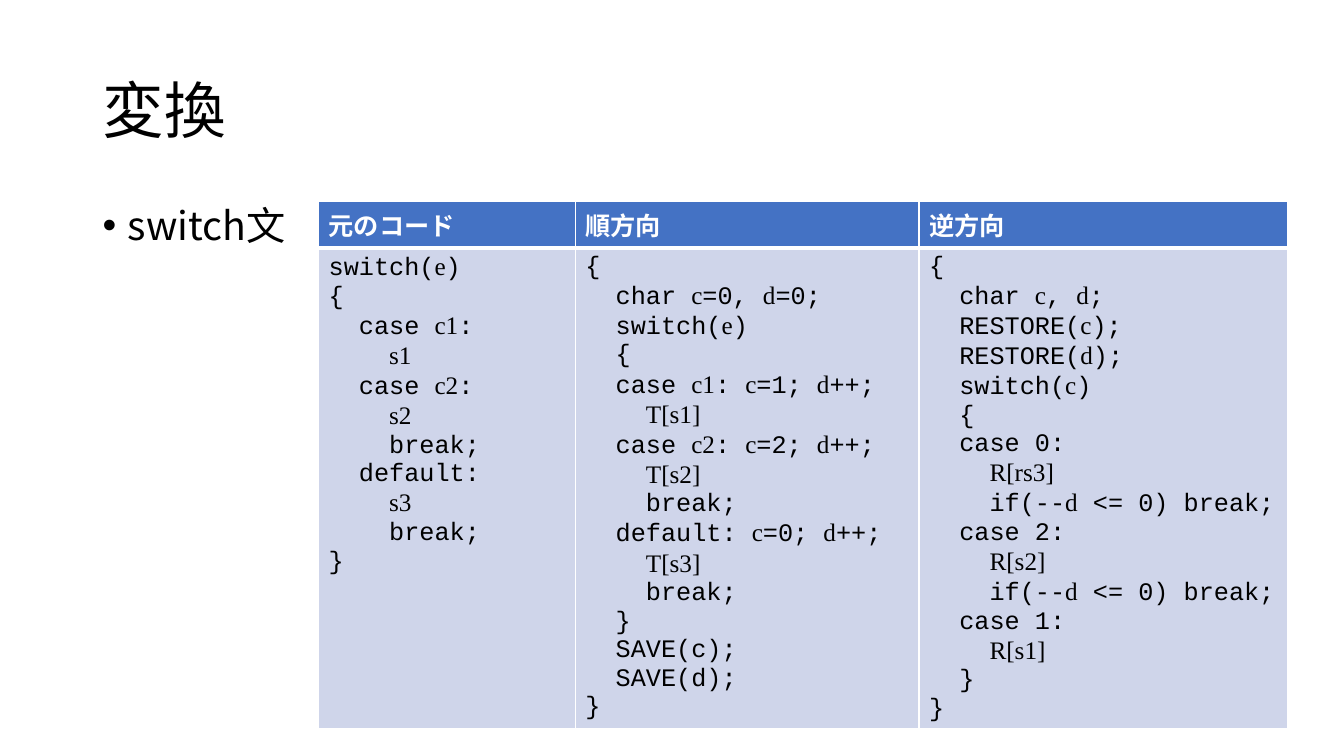
from lxml.etree import SubElement
from pptx import Presentation
from pptx.dml.color import RGBColor
from pptx.enum.text import MSO_ANCHOR, PP_ALIGN
from pptx.oxml.ns import qn
from pptx.util import Cm, Pt

SANS, MONO, SERIF = "Noto Sans CJK JP", "Courier New", "Times New Roman"
BLACK, WHITE, HEADER_BLUE, BODY_BLUE = "000000", "FFFFFF", "4472C4", "CFD5EA"

# Code columns: text between backticks is set in the serif font
ORIGINAL_CODE = """switch(`e`)
{
  case `c1`:
    `s1`
  case `c2`:
    `s2`
    break;
  default:
    `s3`
    break;
}"""

FORWARD_CODE = """{
  char `c`=0, `d`=0;
  switch(`e`)
  {
  case `c1`: `c`=1; `d`++;
    `T[s1]`
  case `c2`: `c`=2; `d`++;
    `T[s2]`
    break;
  default: `c`=0; `d`++;
    `T[s3]`
    break;
  }
  SAVE(c);
  SAVE(d);
}"""

REVERSE_CODE = """{
  char `c`, `d`;
  RESTORE(`c`);
  RESTORE(`d`);
  switch(`c`)
  {
  case 0:
    `R[rs3]`
    if(--`d` <= 0) break;
  case 2:
    `R[s2]`
    if(--`d` <= 0) break;
  case 1:
    `R[s1]`
  }
}"""

# Heading, code and width in cm of each column
COLUMNS = [
    ("元のコード", ORIGINAL_CODE, 6.47),
    ("順方向", FORWARD_CODE, 8.66),
    ("逆方向", REVERSE_CODE, 9.28),
]


def color(hex_string):
    return RGBColor.from_string(hex_string)


def add_text(paragraph, text, size=18, font=SANS, ink=BLACK, bold=False):
    run = paragraph.add_run()
    run.text = text
    run.font.size = Pt(size)
    run.font.bold = bold
    run.font.color.rgb = color(ink)
    run.font.name = font
    SubElement(run.font._element, qn("a:ea"), typeface=font)


def place(shape, left, top, width, height):
    shape.left, shape.top = Cm(left), Cm(top)
    shape.width, shape.height = Cm(width), Cm(height)


def fill_title(title, text):
    place(title, 2.33, 1.01, 29.21, 3.68)
    title.text_frame.vertical_anchor = MSO_ANCHOR.MIDDLE
    heading = title.text_frame.paragraphs[0]
    heading.alignment = PP_ALIGN.LEFT
    heading.line_spacing = 0.9
    add_text(heading, text, size=44)


def fill_list(body, items):
    place(body, 2.33, 5.07, 29.21, 12.09)
    frame = body.text_frame
    for index, text in enumerate(items):
        item = frame.add_paragraph() if index else frame.paragraphs[0]
        item.line_spacing = 0.9
        item.space_before = Pt(10)
        properties = item._p.get_or_add_pPr()
        properties.set("marL", str(Cm(0.64)))
        properties.set("indent", str(-Cm(0.64)))
        SubElement(properties, qn("a:buFont"), typeface="Arial")
        SubElement(properties, qn("a:buChar"), char="•")
        add_text(item, text, size=28)


def style_cell(cell, fill, top=1, bottom=1):
    properties = cell._tc.get_or_add_tcPr()
    for side, width in (("L", 1), ("R", 1), ("T", top), ("B", bottom)):
        line = SubElement(properties, qn(f"a:ln{side}"), w=str(Pt(width)))
        SubElement(SubElement(line, qn("a:solidFill")), qn("a:srgbClr"), val=WHITE)
    cell.fill.solid()
    cell.fill.fore_color.rgb = color(fill)


def fill_code(cell, code):
    for index, code_line in enumerate(code.split("\n")):
        frame = cell.text_frame
        paragraph = frame.paragraphs[0] if index == 0 else frame.add_paragraph()
        for part, text in enumerate(code_line.split("`")):
            if text:
                add_text(paragraph, text, font=SERIF if part % 2 else MONO)


def add_code_table(slide):
    total_width = sum(width for _, _, width in COLUMNS)
    table = slide.shapes.add_table(
        2, len(COLUMNS), Cm(8.03), Cm(5.08), Cm(total_width), Cm(13.25)
    ).table
    table.rows[0].height, table.rows[1].height = Cm(1.16), Cm(12.09)
    for index, (heading, code, width) in enumerate(COLUMNS):
        table.columns[index].width = Cm(width)
        heading_cell, code_cell = table.cell(0, index), table.cell(1, index)
        style_cell(heading_cell, HEADER_BLUE, bottom=3)
        add_text(heading_cell.text_frame.paragraphs[0], heading, ink=WHITE, bold=True)
        style_cell(code_cell, BODY_BLUE, top=3)
        fill_code(code_cell, code)


def main():
    presentation = Presentation()
    presentation.slide_width, presentation.slide_height = Cm(33.87), Cm(19.05)
    slide = presentation.slides.add_slide(presentation.slide_layouts[1])
    # Title and topic
    fill_title(slide.shapes.title, "変換")
    fill_list(slide.placeholders[1], ["switch文"])
    # Code comparison
    add_code_table(slide)
    presentation.save("out.pptx")


if __name__ == "__main__":
    main()
